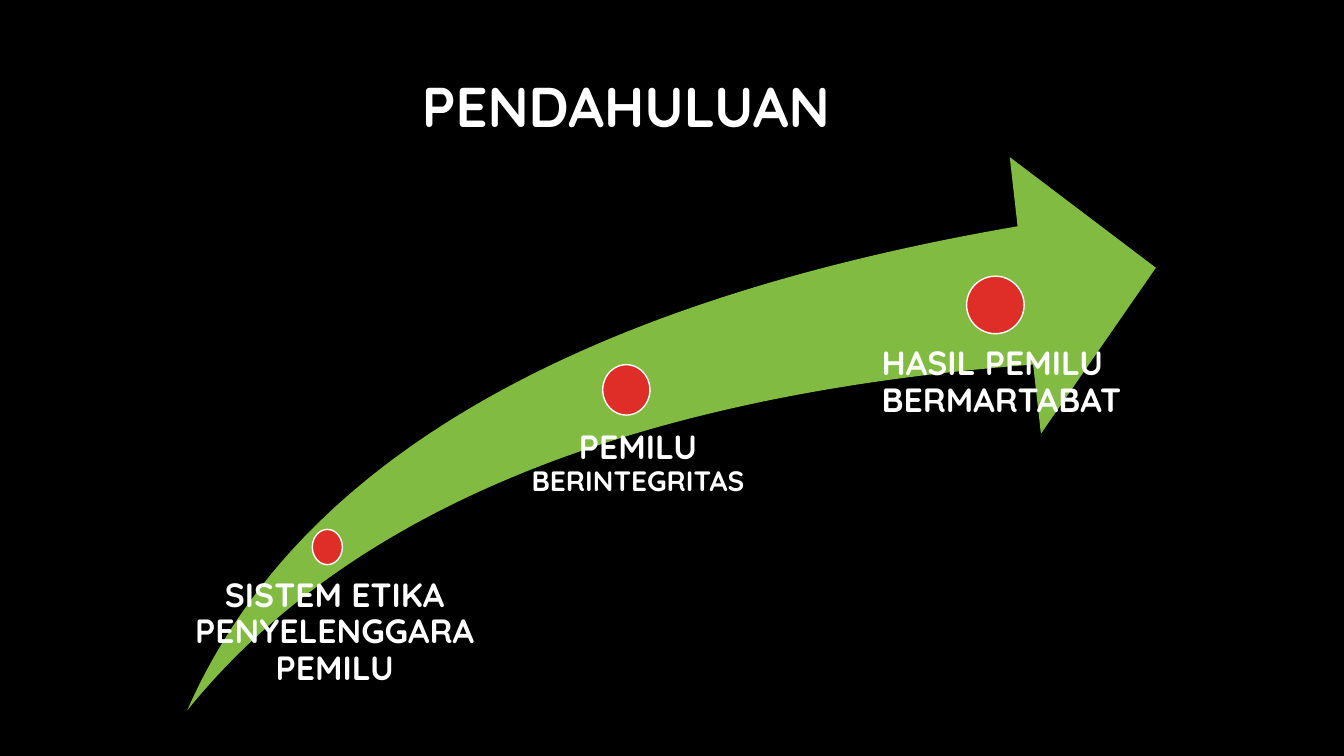
from pptx import Presentation
from pptx.dml.color import RGBColor
from pptx.enum.shapes import MSO_SHAPE
from pptx.enum.text import MSO_ANCHOR, PP_ALIGN
from pptx.util import Cm, Pt

COLORS = {"background": "000000", "text": "FFFFFF", "arrow": "81BB42", "dot": "DF2E28"}
FONT = "Quicksand"
TITLE_BOX = (7.95, 1.55, 15.65, 2.41)
ARROW_BOX = (4.72, 3.96, 24.41, 13.94)

# Dot and label boxes are in centimetres, relative to the arrow's corner.
STAGES = [
    {"dot": (3.15, 9.38, 0.76, 0.89), "label": (-0.78, 10.62, 8.69, 2.97), "inset": 0.3,
     "runs": [("SISTEM ETIKA PENYELENGGARA PEMILU", 24)], "align": PP_ALIGN.CENTER},
    {"dot": (10.47, 5.23, 1.19, 1.27), "label": (7.78, 6.89, 6.6, 1.78), "inset": 0.56,
     "runs": [("PEMILU", 24), (" BERINTEGRITAS", 20)], "align": PP_ALIGN.CENTER},
    {"dot": (19.64, 3, 1.45, 1.45), "label": (16.74, 4.78, 7.16, 1.78), "inset": 0.76,
     "runs": [("HASIL PEMILU BERMARTABAT", 24)], "align": PP_ALIGN.LEFT},
]


def color(name):
    return RGBColor.from_string(COLORS[name])


def lengths(box):
    return [Cm(value) for value in box]


def within(outer, inner):
    """Move a relative box to its place inside the outer box."""
    return (outer[0] + inner[0], outer[1] + inner[1], inner[2], inner[3])


def add_text(slide, box, runs, align=PP_ALIGN.CENTER, anchor=MSO_ANCHOR.TOP,
             margins=(0.25, 0.13, 0.25, 0.13)):
    """Add one bold paragraph made of (text, size) runs."""
    frame = slide.shapes.add_textbox(*lengths(box)).text_frame
    frame.word_wrap = True
    frame.vertical_anchor = anchor
    (frame.margin_left, frame.margin_top,
     frame.margin_right, frame.margin_bottom) = lengths(margins)
    paragraph = frame.paragraphs[0]
    paragraph.alignment = align
    paragraph.line_spacing = 0.9
    for text, size in runs:
        run = paragraph.add_run()
        run.text = text
        run.font.name = FONT
        run.font.size = Pt(size)
        run.font.bold = True
        run.font.color.rgb = color("text")


def add_filled_shape(slide, kind, box, fill, line=None):
    shape = slide.shapes.add_shape(kind, *lengths(box))
    shape.shadow.inherit = False
    shape.fill.solid()
    shape.fill.fore_color.rgb = color(fill)
    if line:
        shape.line.color.rgb = color(line)
        shape.line.width = Pt(1)
    else:
        shape.line.fill.background()
    return shape


def add_title(slide, box):
    add_text(slide, box, [("PENDAHULUAN", 40)], anchor=MSO_ANCHOR.MIDDLE)


def add_stage_arrow(slide, box):
    arrow = add_filled_shape(slide, MSO_SHAPE.SWOOSH_ARROW, box, "arrow")
    arrow.adjustments[0] = 0.25
    arrow.adjustments[1] = 0.25
    for stage in STAGES:
        add_filled_shape(slide, MSO_SHAPE.OVAL, within(box, stage["dot"]), "dot", line="text")
        add_text(slide, within(box, stage["label"]), stage["runs"], align=stage["align"],
                 margins=(stage["inset"], 0, 0, 0))


def main():
    presentation = Presentation()
    presentation.slide_width = Cm(33.87)
    presentation.slide_height = Cm(19.05)
    slide = presentation.slides.add_slide(presentation.slide_layouts[6])
    slide.background.fill.solid()
    slide.background.fill.fore_color.rgb = color("background")
    add_title(slide, TITLE_BOX)
    add_stage_arrow(slide, ARROW_BOX)
    presentation.save("out.pptx")


if __name__ == "__main__":
    main()
